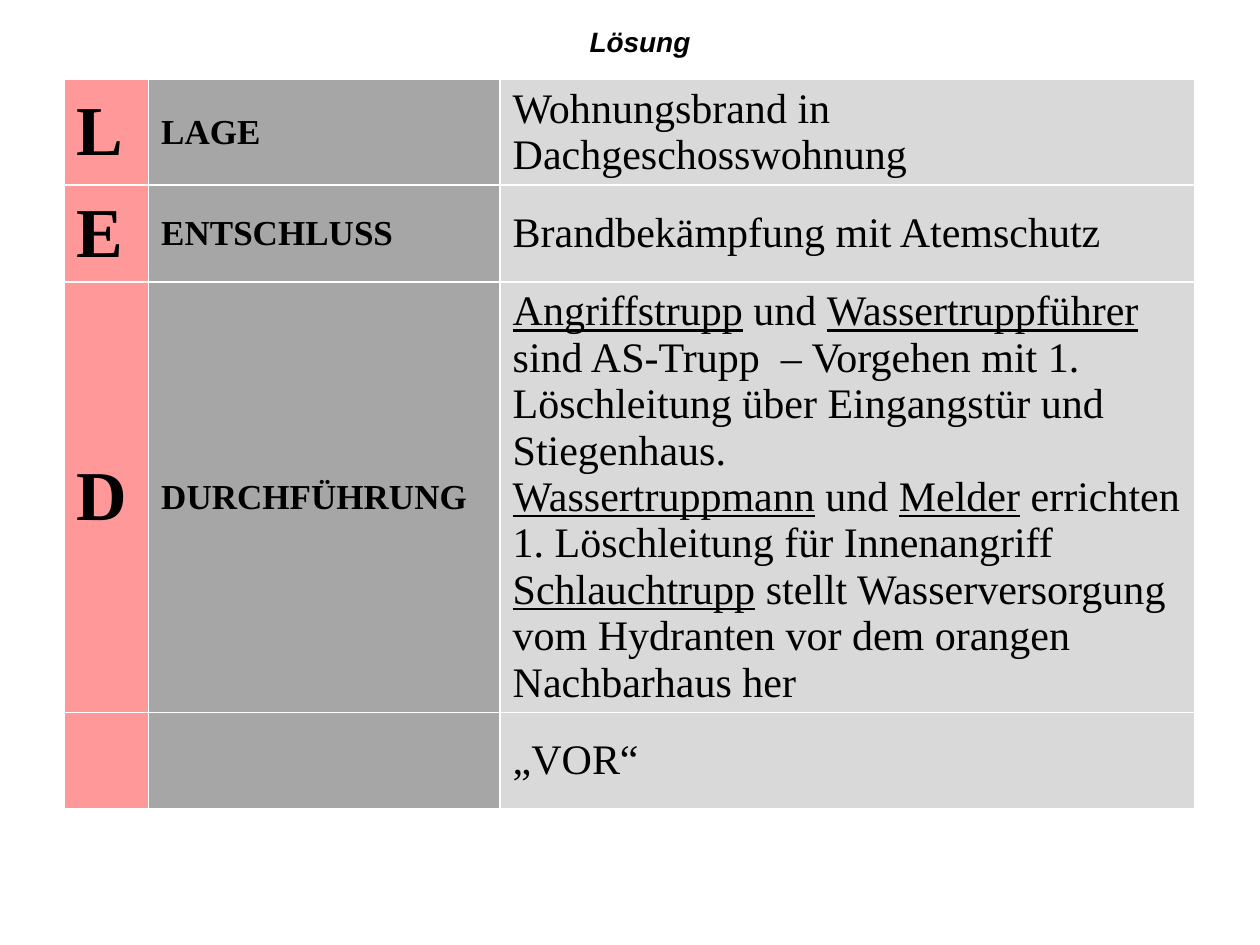
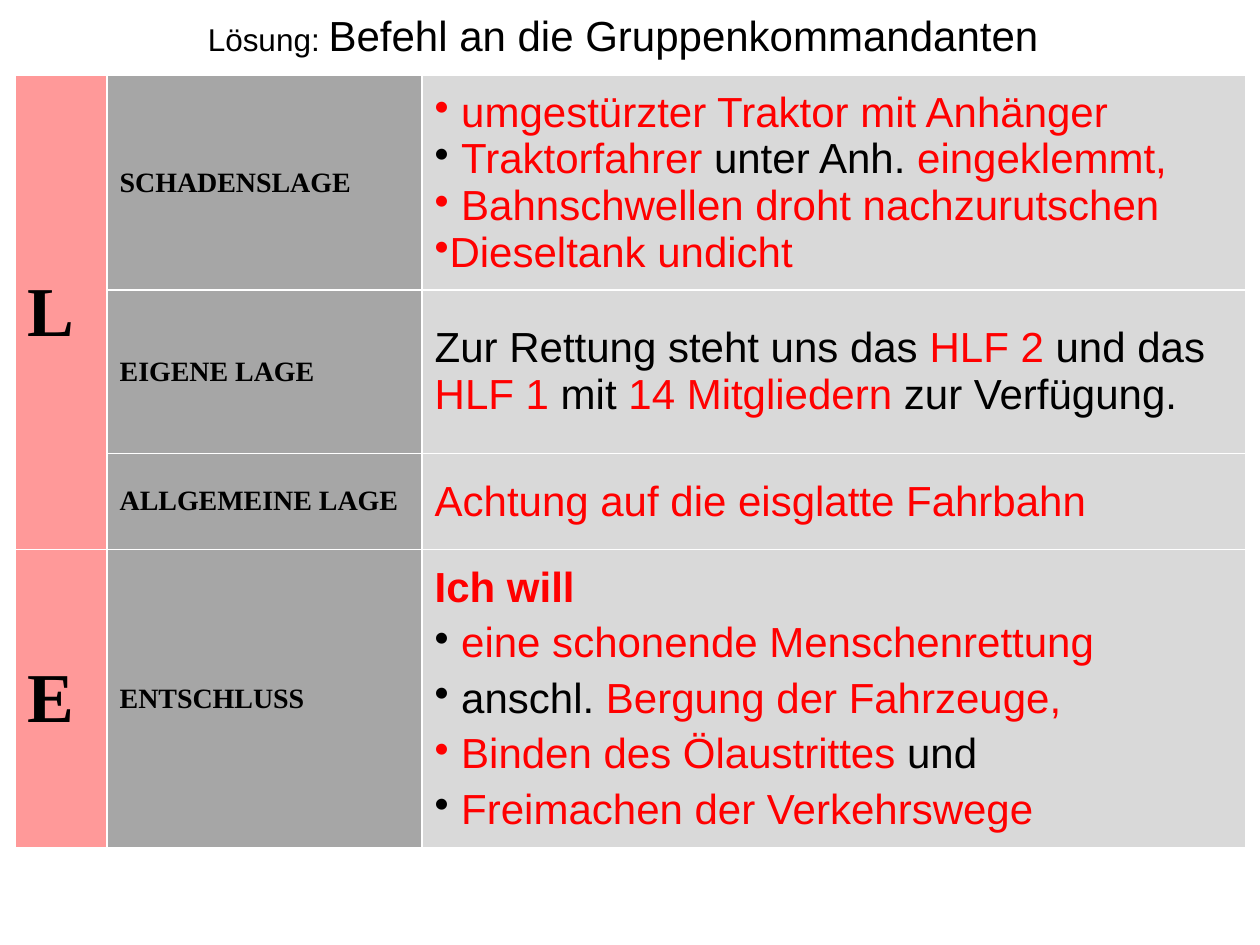
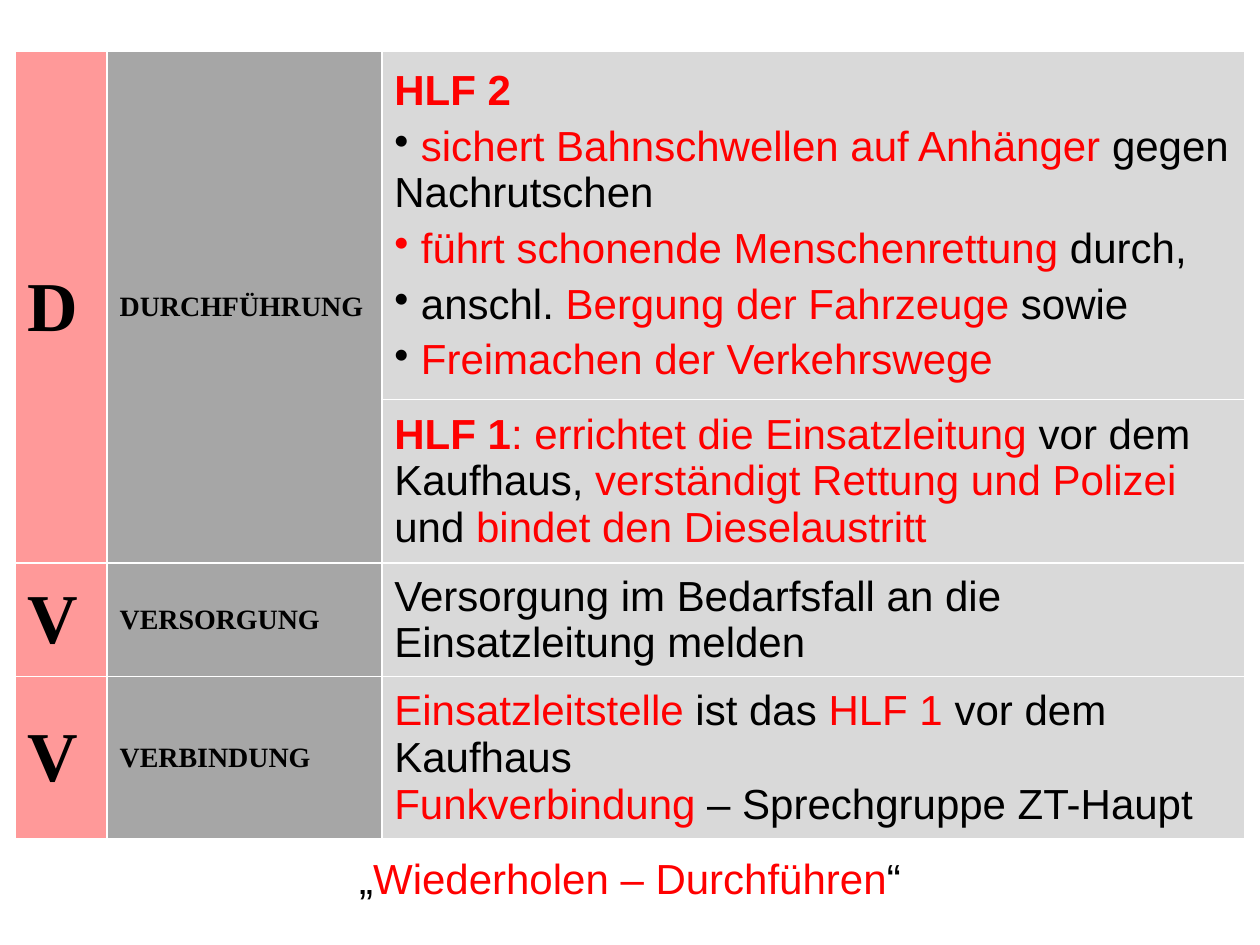
import pptx
import pptx.dml.color
import pptx.enum.text
import pptx.oxml.ns
import pptx.util
from lxml import etree

Inches, Pt = pptx.util.Inches, pptx.util.Pt
ALIGN, ANCHOR = pptx.enum.text.PP_ALIGN, pptx.enum.text.MSO_ANCHOR

BLACK, RED, WHITE = "000000", "FF0000", "FFFFFF"
FILLS = ("FF9999", "A6A6A6", "D9D9D9")
SANS, SERIF = "Arial", "Times New Roman"
MARKS = "*_#"
TITLE_ONLY, BLANK = 5, 6

ORDER = [
    ("L", "LAGE", ["Wohnungsbrand in Dachgeschosswohnung"]),
    ("E", "ENTSCHLUSS", ["Brandbekämpfung mit Atemschutz"]),
    ("D", "DURCHFÜHRUNG", [
        "_Angriffstrupp_ und _Wassertruppführer_ sind AS-Trupp  – Vorgehen mit 1. "
        "Löschleitung über Eingangstür und Stiegenhaus.",
        "_Wassertruppmann_ und _Melder_ errichten 1. Löschleitung für Innenangriff",
        "_Schlauchtrupp_ stellt Wasserversorgung vom Hydranten vor dem orangen "
        "Nachbarhaus her"]),
    ("", "", ["„VOR“"]),
]
GROUP = [
    ("L", "SCHADENSLAGE", [
        "•* umgestürzter Traktor mit Anhänger*",
        "• *Traktorfahrer* unter Anh. *eingeklemmt,*",
        "•* Bahnschwellen droht nachzurutschen*",
        "•*Dieseltank undicht*"]),
    (None, "EIGENE LAGE", [
        "^Zur Rettung steht uns das* HLF 2 *und das* HLF 1 *mit"
        "* 14 Mitgliedern *zur Verfügung."]),
    (None, "ALLGEMEINE LAGE", ["^*Achtung auf die eisglatte Fahrbahn*"]),
    ("E", "ENTSCHLUSS", [
        "^*#Ich will#*",
        "^• *eine schonende Menschenrettung*",
        "^• anschl. *Bergung der Fahrzeuge,*",
        "^•* Binden des Ölaustrittes *und",
        "^• *Freimachen der Verkehrswege*"]),
]
TASKS = [
    ("D", "DURCHFÜHRUNG", [
        "^*#HLF 2#*",
        "^• *sichert Bahnschwellen auf Anhänger* gegen Nachrutschen",
        "^•* führt schonende Menschenrettung* durch,",
        "^• anschl. *Bergung der Fahrzeuge* sowie",
        "^• *Freimachen der Verkehrswege*"]),
    (None, None, [
        "*#HLF 1#: errichtet die Einsatzleitung *vor dem Kaufhaus, "
        "*verständigt Rettung und Polizei* und *bindet den Dieselaustritt*"]),
    ("V", "VERSORGUNG", ["Versorgung im Bedarfsfall an die Einsatzleitung melden"]),
    ("V", "VERBINDUNG", [
        "^*Einsatzleitstelle* ist das *HLF 1 *vor dem Kaufhaus",
        "*Funkverbindung *– Sprechgruppe ZT-Haupt"]),
]


def color(code):
    return pptx.dml.color.RGBColor.from_string(code)


def paint(thing, code):
    thing.fill.solid()
    thing.fill.fore_color.rgb = color(code)


def style(font, size, face, bold=False, code=BLACK):
    font.size, font.name, font.bold = Pt(size), face, bold
    font.color.rgb = color(code)


def split(line):
    """Yield text with its state; * toggles red, _ underline, # bold."""
    state, text = dict.fromkeys(MARKS, False), ""
    for char in line:
        if char not in MARKS:
            text += char
            continue
        if text:
            yield text, dict(state)
        state[char], text = not state[char], ""
    if text:
        yield text, state


def bullet(para):
    props = para._p.get_or_add_pPr()
    props.set("marL", "0")
    props.set("indent", "0")
    tag = etree.SubElement(props, pptx.oxml.ns.qn("a:buChar"))
    tag.set("char", "•")


def write(para, line, size, face):
    """Fill a paragraph; a leading ^ adds space before, a leading • a bullet."""
    if line.startswith("^"):
        para.space_before, line = Pt(5), line[1:]
    if line.startswith("•"):
        bullet(para)
        line = line[1:]
    parts = list(split(line))
    base = parts[0][1]
    style(para.font, size, face, base["#"], RED if base["*"] else BLACK)
    for text, state in parts:
        run = para.add_run()
        run.text = text
        if state["*"] != base["*"]:
            run.font.color.rgb = color(RED if state["*"] else BLACK)
        if state["#"] != base["#"]:
            run.font.bold = state["#"]
        if state["_"]:
            run.font.underline = True


def grid(slide, box, cols, rows, items, size, face):
    """Place a command table: letter, label and note per row; None joins upwards."""
    shape = slide.shapes.add_table(len(rows), len(cols), *map(Inches, box))
    table = shape.table
    table.first_row = table.horz_banding = False
    for col, width in zip(table.columns, cols):
        col.width = Inches(width)
    for row, height in zip(table.rows, rows):
        row.height = Inches(height)
    tops = [0, 0]
    for r, (*heads, lines) in enumerate(items):
        for c, code in enumerate(FILLS):
            cell = table.cell(r, c)
            paint(cell, code)
            cell.vertical_anchor = ANCHOR.MIDDLE
        for c, (text, points) in enumerate(zip(heads, (40, size))):
            if text is None:
                continue
            if r - tops[c] > 1:
                table.cell(tops[c], c).merge(table.cell(r - 1, c))
            tops[c] = r
            para = table.cell(r, c).text_frame.paragraphs[0]
            para.text = text
            style(para.font, points, SERIF, True)
        frame = table.cell(r, 2).text_frame
        for n, line in enumerate(lines):
            para = frame.add_paragraph() if n else frame.paragraphs[0]
            write(para, line, 24, face)


def centre(shape, box):
    """Move a text shape to its box and return its centred paragraph."""
    shape.left, shape.top, shape.width, shape.height = map(Inches, box)
    frame = shape.text_frame
    frame.word_wrap = True
    frame.auto_size = pptx.enum.text.MSO_AUTO_SIZE.NONE
    frame.vertical_anchor = ANCHOR.MIDDLE
    para = frame.paragraphs[0]
    para.alignment = ALIGN.CENTER
    return para


def solve(deck):
    slide = deck.slides.add_slide(deck.slide_layouts[TITLE_ONLY])
    title = slide.shapes.title
    paint(title, WHITE)
    para = centre(title, (3.58, 0.13, 3, 0.4))
    para.text = "Lösung"
    style(para.font, 16, SANS, True)
    para.font.italic = True
    grid(slide, (0.51, 0.63, 8.97, 5.78), (0.67, 2.79, 5.51),
         (0.83, 0.77, 3.42, 0.76), ORDER, 20, SERIF)


def brief(deck):
    slide = deck.slides.add_slide(deck.slide_layouts[TITLE_ONLY])
    para = centre(slide.shapes.title, (0.12, 0, 9.65, 0.55))
    style(para.font, 24, SANS)
    for text, size in (("Lösung: ", 18), ("Befehl an die Gruppenkommandanten", 24)):
        run = para.add_run()
        run.text = text
        run.font.size = Pt(size)
    grid(slide, (0.12, 0.6, 9.77, 6.13), (0.73, 2.5, 6.54),
         (1.7, 1.3, 0.76, 2.37), GROUP, 16, SANS)


def assign(deck):
    slide = deck.slides.add_slide(deck.slide_layouts[BLANK])
    box = (0.12, 6.71, 9.76, 0.51)
    para = centre(slide.shapes.add_textbox(*map(Inches, box)), box)
    write(para, "„*Wiederholen – Durchführen*“", 24, SANS)
    grid(slide, (0.12, 0.41, 9.76, 6.25), (0.73, 2.18, 6.85),
         (2.76, 1.3, 0.9, 1.29), TASKS, 16, SANS)


def main():
    deck = pptx.Presentation()
    deck.slide_width, deck.slide_height = Inches(10), Inches(7.5)
    for build in (solve, brief, assign):
        build(deck)
    deck.save("out.pptx")


if __name__ == "__main__":
    main()
